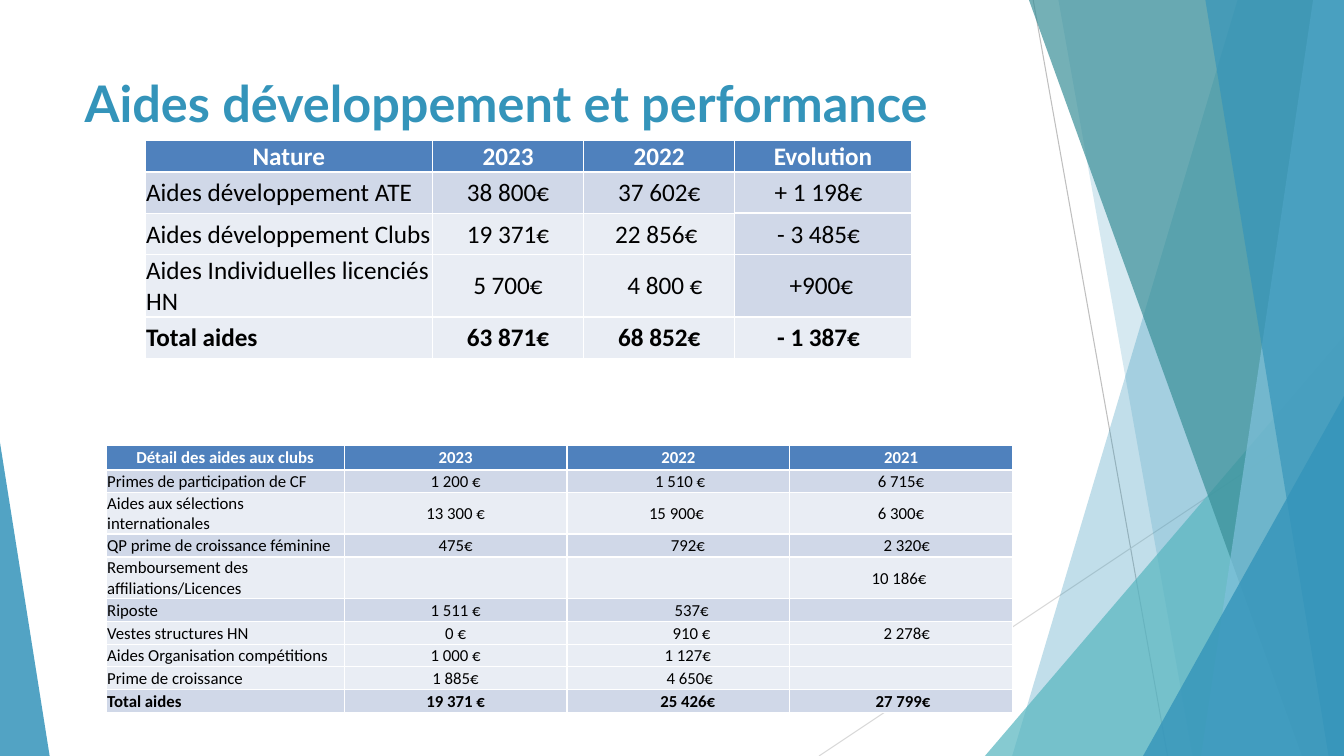
import lxml.etree
import pptx
import pptx.dml.color
import pptx.enum.shapes
import pptx.enum.text
import pptx.oxml.ns
import pptx.util

Pt = pptx.util.Pt
qn = pptx.oxml.ns.qn
ALIGN = pptx.enum.text.PP_ALIGN
ANCHOR = pptx.enum.text.MSO_ANCHOR

THEME = {
    "accent": "3494BA", "teal": "58B6C0", "deep": "3A8F98", "sky": "7FC1DB",
    "line": "BFBFBF", "pale_line": "D9D9D9", "white": "FFFFFF", "black": "000000",
    "header": "4F81BD", "dark": "D0D8E8", "light": "E9EDF4",
    "title_font": "Lato", "table_font": "Calibri",
    "title_size": 36, "summary_size": 18, "detail_size": 12,
    "space_width": 0.226,
}


def rgb(name):
    return pptx.dml.color.RGBColor.from_string(THEME[name])


def assign(obj, values):
    for key, value in values.items():
        setattr(obj, key, value)


class Deck:
    """Draws themed elements on the current slide, with lengths in points."""

    def __init__(self, prs):
        self.prs = prs
        self.s = prs.slides.add_slide(prs.slide_layouts[5])

    def format_run(self, r, font, size, color, bold):
        assign(r.font, {"name": THEME[font], "size": Pt(THEME[size]), "bold": bold})
        r.font.color.rgb = rgb(color)

    def paint(self, sp, color, opacity):
        sp.shadow.inherit = False
        sp.fill.solid()
        sp.fill.fore_color.rgb = rgb(color)
        sp.line.fill.background()
        clr = next(sp._element.spPr.iter(qn("a:srgbClr")))
        lxml.etree.SubElement(clr, qn("a:alpha"), val=str(opacity * 1000))

    def line(self, x1, y1, x2, y2, color):
        kind = pptx.enum.shapes.MSO_CONNECTOR.STRAIGHT
        sp = self.s.shapes.add_connector(kind, Pt(x1), Pt(y1), Pt(x2), Pt(y2))
        sp.line.width = Pt(0.75)
        sp.line.color.rgb = rgb(color)
        lxml.etree.SubElement(sp._element.spPr, qn("a:effectLst"))

    def band(self, top_left, top_right, bottom_right, bottom_left, color, opacity):
        height = 540
        builder = self.s.shapes.build_freeform(top_left, 0, scale=Pt(1))
        builder.add_line_segments(
            [(top_right, 0), (bottom_right, height), (bottom_left, height)], close=True)
        self.paint(builder.convert_to_shape(), color, opacity)

    def triangle(self, x, y, w, h, apex, color, opacity):
        kind = pptx.enum.shapes.MSO_SHAPE.ISOSCELES_TRIANGLE
        sp = self.s.shapes.add_shape(kind, Pt(x), Pt(y), Pt(w), Pt(h))
        sp.adjustments[0] = apex
        self.paint(sp, color, opacity)

    def title(self, text, x, y, w, h):
        sp = self.s.shapes.title
        self.s.shapes._spTree.append(sp._element)
        assign(sp, {"left": Pt(x), "top": Pt(y), "width": Pt(w), "height": Pt(h)})
        tf = sp.text_frame
        assign(tf, {"word_wrap": True, "vertical_anchor": ANCHOR.TOP,
                    "auto_size": pptx.enum.text.MSO_AUTO_SIZE.NONE})
        p = tf.paragraphs[0]
        p.alignment = ALIGN.LEFT
        r = p.add_run()
        r.text = text
        self.format_run(r, "title_font", "title_size", "accent", True)

    def borders(self, cell, thick_top, thick_bottom):
        widths = {"lnL": 1, "lnR": 1, "lnT": 1.5 if thick_top else 1,
                  "lnB": 1.5 if thick_bottom else 1}
        tcPr = cell._tc.get_or_add_tcPr()
        for tag, width in widths.items():
            ln = lxml.etree.SubElement(tcPr, qn(f"a:{tag}"), w=str(Pt(width)))
            fill = lxml.etree.SubElement(ln, qn("a:solidFill"))
            lxml.etree.SubElement(fill, qn("a:srgbClr"), val=THEME["white"])

    def cell(self, cell, text, size, color, bold, centred, fill, nudge, right):
        step = THEME["space_width"] * THEME[size]
        assign(cell, {
            "vertical_anchor": ANCHOR.MIDDLE,
            "margin_left": Pt(0.7 + step * max(nudge, 0)),
            "margin_right": Pt(right + step * max(-nudge, 0)),
            "margin_top": Pt(0.7), "margin_bottom": 0,
        })
        cell.fill.solid()
        cell.fill.fore_color.rgb = rgb(fill)
        p = cell.text_frame.paragraphs[0]
        p.alignment = ALIGN.CENTER if centred else ALIGN.LEFT
        if text:
            r = p.add_run()
            r.text = text
            self.format_run(r, "table_font", size, color, bold)
        else:
            lxml.etree.SubElement(p._p, qn("a:endParaRPr"), sz=str(THEME[size] * 100))

    def table(self, x, y, cols, heights, rows, size, fills, thick, nudges, wide=()):
        frame = self.s.shapes.add_table(
            len(rows), len(cols), Pt(x), Pt(y), Pt(sum(cols)), Pt(sum(heights)))
        table = frame.table
        for col, width in zip(table.columns, cols):
            col.width = Pt(width)
        for i, (row, height) in enumerate(zip(rows, heights)):
            table.rows[i].height = Pt(height)
            for j, text in enumerate(row):
                cell = table.cell(i, j)
                self.borders(cell, (i - 1, j) in thick, (i, j) in thick)
                self.cell(cell, text, size, "black" if i else "white",
                          i in (0, len(rows) - 1), i == 0 or j > 0,
                          fills(i, j), nudges.get((i, j), 0),
                          7 if i and j in wide else 0.7)


SUMMARY = [
    ("Nature", "2023", "2022", "Evolution"),
    ("Aides développement ATE", "38 800€", "37 602€", "+ 1 198€"),
    ("Aides développement Clubs", "19 371€", "22 856€", "- 3 485€"),
    ("Aides Individuelles licenciés HN", "5 700€", "4 800 €", "+900€"),
    ("Total aides", "63 871€", "68 852€", "- 1 387€"),
]
DETAIL = [
    ("Détail des aides aux clubs", "2023", "2022", "2021"),
    ("Primes de participation de CF", "1 200 €", "1 510 €", "6 715€"),
    ("Aides aux sélections internationales", "13 300 €", "15 900€", "6 300€"),
    ("QP prime de croissance féminine", "475€", "792€", "2 320€"),
    ("Remboursement des affiliations/Licences", "", "", "10 186€"),
    ("Riposte", "1 511 €", "537€", ""),
    ("Vestes structures HN", "0 €", "910 €", "2 278€"),
    ("Aides Organisation compétitions", "1 000 €", "1 127€", ""),
    ("Prime de croissance", "1 885€", "4 650€", ""),
    ("Total aides", "19 371 €", "25 426€", "27 799€"),
]


def summary_fill(i, j):
    if i == 0:
        return "header"
    return "dark" if i == 1 or (j == 3 and i < 4) else "light"


def detail_fill(i, j):
    if i == 0:
        return "header"
    return "dark" if i in (1, 3, 5, 9) else "light"


def main():
    prs = pptx.Presentation()
    assign(prs, {"slide_width": Pt(960), "slide_height": Pt(540)})
    deck = Deck(prs)
    deck.line(738, 0, 834, 540, "line")
    deck.line(960, 290, 585, 540, "pale_line")
    deck.band(884, 960, 960, 723, "accent", 30)
    deck.band(756, 960, 960, 852, "accent", 20)
    deck.triangle(703.5, 240, 256.5, 300, 1, "teal", 72)
    deck.band(735, 960, 960, 929.5, "deep", 70)
    deck.band(938, 960, 960, 858, "sky", 70)
    deck.band(861, 960, 960, 949, "accent", 65)
    deck.triangle(816.5, 283, 143.5, 257, 1, "accent", 80)
    deck.triangle(0, 316, 35.5, 224, 0, "accent", 85)
    deck.title("Aides développement et performance", 53.3, 48.2, 677, 104)
    header = {(0, j) for j in range(4)}
    deck.table(103.7, 100.2, [205.2, 108, 108, 126], [22.3] + [29.5] * 4,
               SUMMARY, "summary_size", summary_fill,
               header | {(i, 3) for i in (1, 2, 3)},
               {(2, 2): -1, (3, 2): 2, (3, 3): 1}, wide=(3,))
    deck.table(75.9, 318.5, [170] + [159.1] * 3, [17] + [16.2] * 9,
               DETAIL, "detail_size", detail_fill,
               header | {(2, j) for j in range(4)},
               {(1, 2): 1, (2, 2): -1, (3, 2): 5, (5, 2): 7, (6, 2): 7, (7, 2): 5,
                (8, 2): 6, (9, 2): 5, (3, 3): 3, (4, 3): -1, (6, 3): 3, (9, 3): 1})
    prs.save("out.pptx")


if __name__ == "__main__":
    main()
